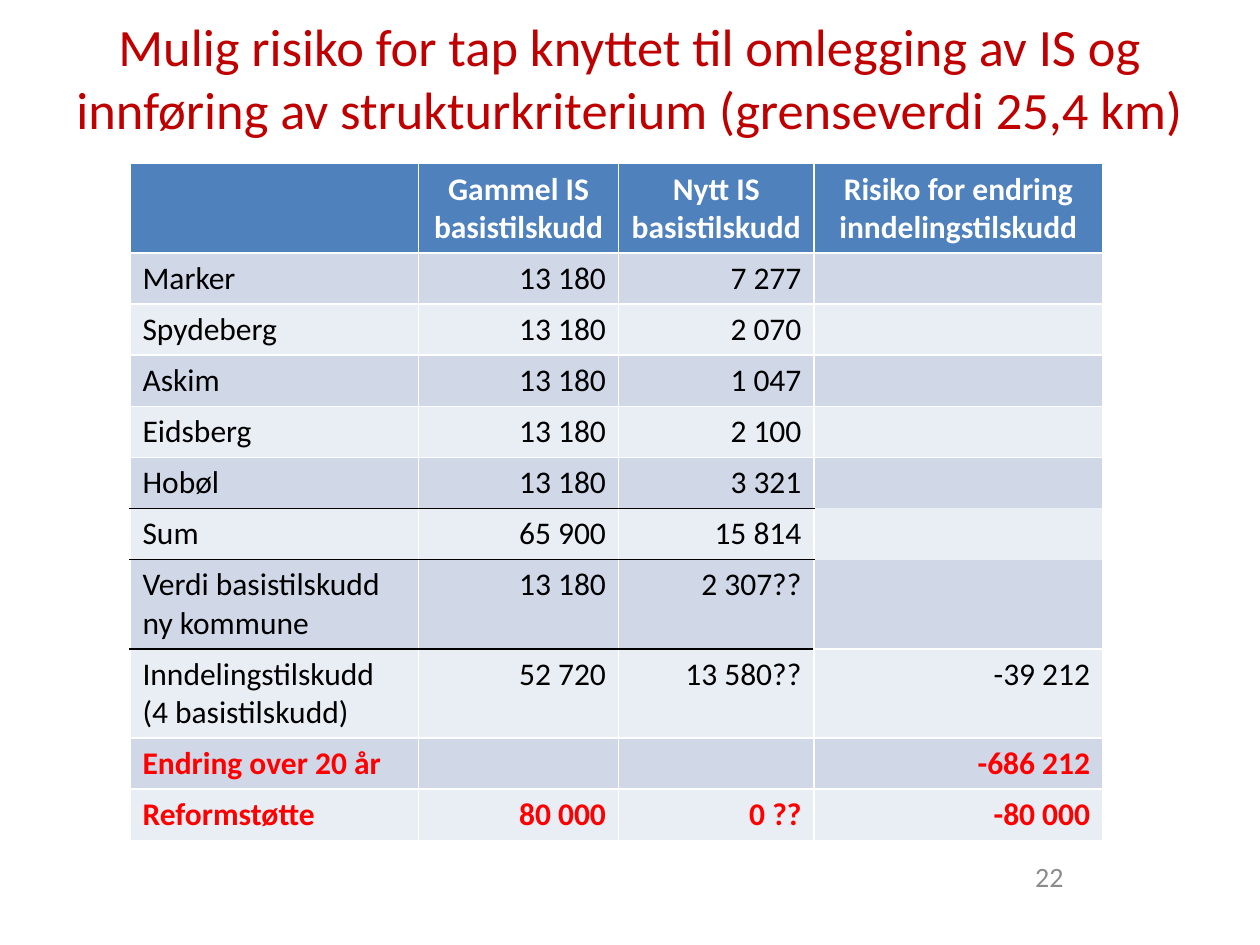
from lxml.etree import SubElement
from pptx import Presentation as Deck
from pptx.dml.color import RGBColor as Color
from pptx.enum.text import MSO_ANCHOR as Anchor, PP_ALIGN as Align
from pptx.oxml.ns import qn
from pptx.util import Cm, Pt

TITLE = ("Mulig risiko for tap knyttet til omlegging av IS og "
         "innføring av strukturkriterium (grenseverdi 25,4 km)")
PAGE_NUMBER = "22"
ROWS = [
    ("", "Gammel IS\nbasistilskudd", "Nytt IS\nbasistilskudd",
     "Risiko for endring\ninndelingstilskudd"),
    ("Marker", "13 180", "7 277", ""),
    ("Spydeberg", "13 180", "2 070", ""),
    ("Askim", "13 180", "1 047", ""),
    ("Eidsberg", "13 180", "2 100", ""),
    ("Hobøl", "13 180", "3 321", ""),
    ("Sum", "65 900", "15 814", ""),
    ("Verdi basistilskudd ny kommune", "13 180", "2 307??", ""),
    ("Inndelingstilskudd (4 basistilskudd)", "52 720", "13 580??", "-39 212"),
    ("Endring over 20 år", "", "", "-686 212"),
    ("Reformstøtte", "80 000", "0 ??", "-80 000"),
]
COLUMN_WIDTHS = (5.82, 4.03, 3.94, 5.82)
ROW_HEIGHT, TALL_HEIGHT = 1.03, 1.8
TALL_ROWS = {0, 7, 8}
RULED_BELOW = {5, 6, 7}
OPEN_BELOW = {5, 6}
RED_FROM = 9

THEME = {
    "font": "Calibri",
    "header": "4F81BD",
    "bands": ("E9EDF4", "D0D8E8"),
    "rule": "000000",
    "title": {"size": 30, "color": "C00000", "bold": False},
    "number": {"size": 16, "color": "8C8C8C", "bold": False},
    "head": {"size": 18, "color": "FFFFFF", "bold": True},
    "body": {"size": 18, "color": "000000", "bold": False},
    "alert": {"size": 18, "color": "FF0000", "bold": True},
}


def write(frame, text, style, align):
    look = THEME[style]
    formats = {"name": THEME["font"], "size": Pt(look["size"]), "bold": look["bold"]}
    frame.text = text
    for para in frame.paragraphs:
        para.alignment = align
        for span in para.runs:
            for name, value in formats.items():
                setattr(span.font, name, value)
            span.font.color.rgb = Color.from_string(look["color"])


def add_text(page, place, text, style, align):
    box = page.shapes.add_textbox(*map(Cm, place))
    box.text_frame.word_wrap = True
    box.text_frame.vertical_anchor = Anchor.MIDDLE
    write(box.text_frame, text, style, align)


def set_edge(cell, side, color):
    line = SubElement(cell._tc.get_or_add_tcPr(), qn(f"a:ln{side}"), w=str(Pt(1)))
    if color:
        fill = SubElement(line, qn("a:solidFill"))
        SubElement(fill, qn("a:srgbClr"), val=color)
    else:
        SubElement(line, qn("a:noFill"))


def add_grid(page):
    heights = [TALL_HEIGHT if row in TALL_ROWS else ROW_HEIGHT for row in range(len(ROWS))]
    place = (2.62, 3.3, sum(COLUMN_WIDTHS), sum(heights))
    table = page.shapes.add_table(len(ROWS), len(COLUMN_WIDTHS), *map(Cm, place)).table
    for column, width in zip(table.columns, COLUMN_WIDTHS):
        column.width = Cm(width)
    last = len(COLUMN_WIDTHS) - 1
    for row, texts in enumerate(ROWS):
        table.rows[row].height = Cm(heights[row])
        style = "head" if row == 0 else "alert" if row >= RED_FROM else "body"
        color = THEME["header"] if row == 0 else THEME["bands"][row % 2]
        for column, text in enumerate(texts):
            cell = table.cell(row, column)
            edged = OPEN_BELOW if column == last else RULED_BELOW
            for side, above in (("T", row - 1), ("B", row)):
                if above in edged:
                    set_edge(cell, side, None if column == last else THEME["rule"])
            cell.fill.solid()
            cell.fill.fore_color.rgb = Color.from_string(color)
            align = Align.CENTER if row == 0 else Align.RIGHT if column else Align.LEFT
            write(cell.text_frame, text, style, align)


def main():
    deck = Deck()
    deck.slide_width, deck.slide_height = Cm(25.4), Cm(19.05)
    page = deck.slides.add_slide(deck.slide_layouts[6])
    add_text(page, (1.27, 0, 22.86, 3.1), TITLE, "title", Align.CENTER)
    add_text(page, (18.44, 17.15, 3.25, 1.02), PAGE_NUMBER, "number", Align.RIGHT)
    add_grid(page)
    deck.save("out.pptx")


if __name__ == "__main__":
    main()
